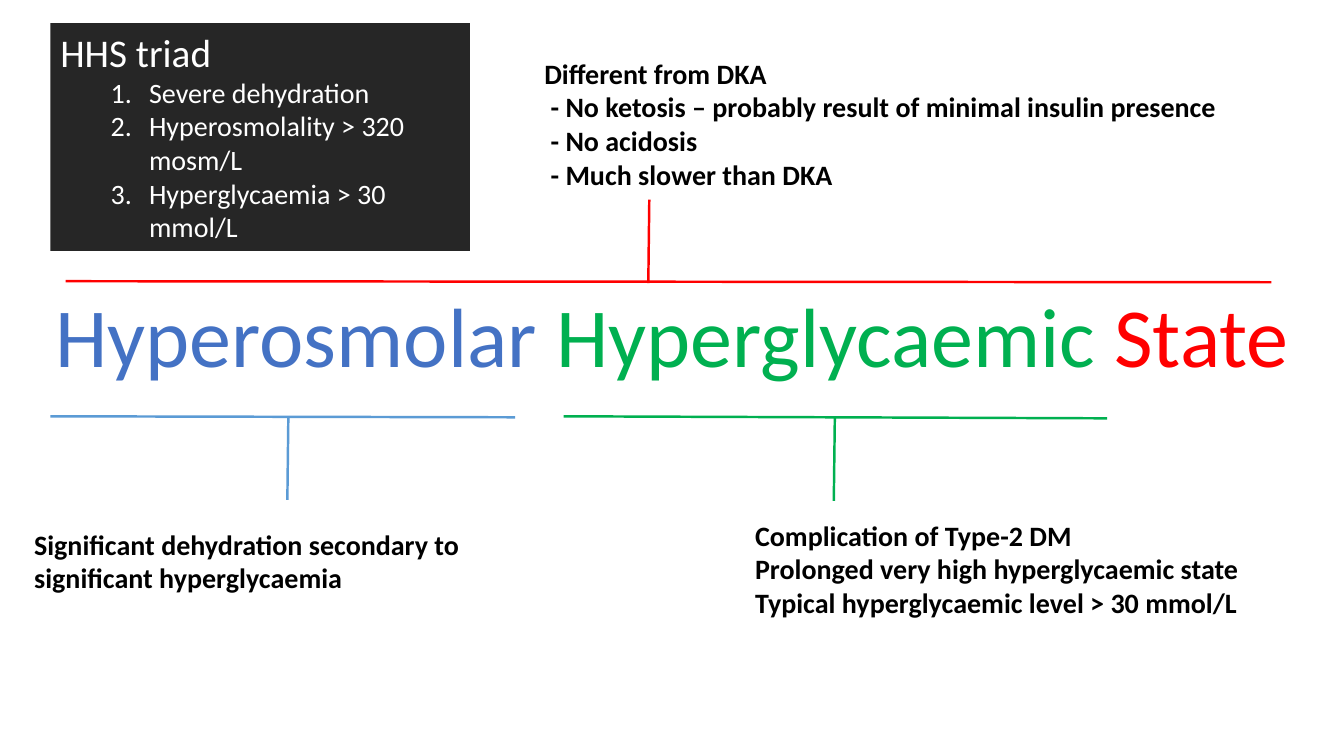
from dataclasses import dataclass

from lxml import etree
from pptx import Presentation
from pptx import util as u
from pptx.dml.color import RGBColor
from pptx.enum import shapes, text
from pptx.oxml import ns

COLORS = {
    "blue": "4472C4",
    "light_blue": "5B9BD5",
    "green": "00B050",
    "red": "FF0000",
    "black": "000000",
    "white": "FFFFFF",
    "charcoal": "262626",
}
FONT = "Calibri"


@dataclass(frozen=True)
class Line:
    start: tuple[float, float]
    end: tuple[float, float]
    color: str


@dataclass(frozen=True)
class Note:
    left: float
    top: float
    width: float
    height: float
    lines: tuple[str, ...]


LINES = [
    Line((0.5, 4.13), (5.11, 4.14), "light_blue"),
    Line((2.86, 4.13), (2.85, 4.96), "light_blue"),
    Line((5.59, 4.13), (10.98, 4.15), "green"),
    Line((8.28, 4.14), (8.27, 4.97), "green"),
    Line((0.65, 2.79), (12.61, 2.8), "red"),
    Line((6.44, 1.98), (6.43, 2.81), "red"),
]
NOTES = [
    Note(0.24, 5.18, 5.54, 1.08, (
        "Significant dehydration secondary to significant hyperglycaemia",
    )),
    Note(7.39, 5.09, 5.02, 1.41, (
        "Complication of Type-2 DM",
        "Prolonged very high hyperglycaemic state",
        "Typical hyperglycaemic level > 30 mmol/L",
    )),
    Note(5.3, 0.51, 7.64, 1.75, (
        "Different from DKA",
        " - No ketosis – probably result of minimal insulin presence",
        " - No acidosis",
        " - Much slower than DKA",
    )),
]
TITLE = [("Hyperosmolar ", "blue"), ("Hyperglycaemic", "green"), (" State", "red")]
TRIAD = [
    "Severe dehydration",
    "Hyperosmolality > 320 mosm/L",
    "Hyperglycaemia > 30 mmol/L",
]


def rgb(color: str) -> RGBColor:
    return RGBColor.from_string(COLORS[color])


def add_text(paragraph, content: str, *, size: float, color: str, bold: bool = False) -> None:
    run = paragraph.add_run()
    run.text = content
    run.font.name = FONT
    run.font.size = u.Pt(size)
    run.font.bold = bold
    run.font.color.rgb = rgb(color)


def next_paragraph(frame, index: int):
    """Return the frame's first paragraph for index 0, otherwise a new one."""
    return frame.paragraphs[0] if index == 0 else frame.add_paragraph()


def number_paragraph(paragraph) -> None:
    """Number the paragraph as an indented list item."""
    paragraph.level = 1
    properties = paragraph._p.get_or_add_pPr()
    properties.set("marL", str(u.Inches(0.88)))
    properties.set("indent", str(u.Inches(-0.38)))
    etree.SubElement(properties, ns.qn("a:buFont"), typeface="+mj-lt")
    etree.SubElement(properties, ns.qn("a:buAutoNum"), type="arabicPeriod")


def add_text_box(slide, left: float, top: float, width: float, height: float, wrap: bool = True):
    box = slide.shapes.add_textbox(*map(u.Inches, (left, top, width, height)))
    frame = box.text_frame
    frame.word_wrap = wrap
    frame.auto_size = text.MSO_AUTO_SIZE.SHAPE_TO_FIT_TEXT
    return frame


def add_title(slide) -> None:
    paragraph = add_text_box(slide, 0.39, 2.76, 12.55, 1.11, wrap=False).paragraphs[0]
    paragraph.alignment = text.PP_ALIGN.CENTER
    for word, color in TITLE:
        add_text(paragraph, word, size=60, color=color)


def add_line(slide, line: Line) -> None:
    connector = slide.shapes.add_connector(
        shapes.MSO_CONNECTOR.STRAIGHT, *map(u.Inches, line.start + line.end)
    )
    connector.line.color.rgb = rgb(line.color)
    connector.line.width = u.Pt(1.75)
    etree.SubElement(connector._element.spPr, ns.qn("a:effectLst"))


def add_note(slide, note: Note) -> None:
    frame = add_text_box(slide, note.left, note.top, note.width, note.height)
    for index, content in enumerate(note.lines):
        add_text(next_paragraph(frame, index), content, size=20, color="black", bold=True)


def add_triad(slide) -> None:
    shape = slide.shapes.add_shape(
        shapes.MSO_SHAPE.RECTANGLE, *map(u.Inches, (0.5, 0.23, 4.16, 2.26))
    )
    shape.shadow.inherit = False
    shape.fill.solid()
    shape.fill.fore_color.rgb = rgb("charcoal")
    shape.line.fill.background()
    frame = shape.text_frame
    frame.word_wrap = True
    frame.auto_size = text.MSO_AUTO_SIZE.SHAPE_TO_FIT_TEXT
    frame.vertical_anchor = text.MSO_ANCHOR.TOP
    for index, content in enumerate(["HHS triad", *TRIAD]):
        paragraph = next_paragraph(frame, index)
        paragraph.alignment = text.PP_ALIGN.LEFT
        if index:
            number_paragraph(paragraph)
        add_text(paragraph, content, size=20 if index else 28, color="white")


def main() -> None:
    presentation = Presentation()
    presentation.slide_width = u.Inches(13.33)
    presentation.slide_height = u.Inches(7.5)
    slide = presentation.slides.add_slide(presentation.slide_layouts[6])
    add_title(slide)
    for line in LINES:
        add_line(slide, line)
    for note in NOTES:
        add_note(slide, note)
    add_triad(slide)
    presentation.save("out.pptx")


if __name__ == "__main__":
    main()
